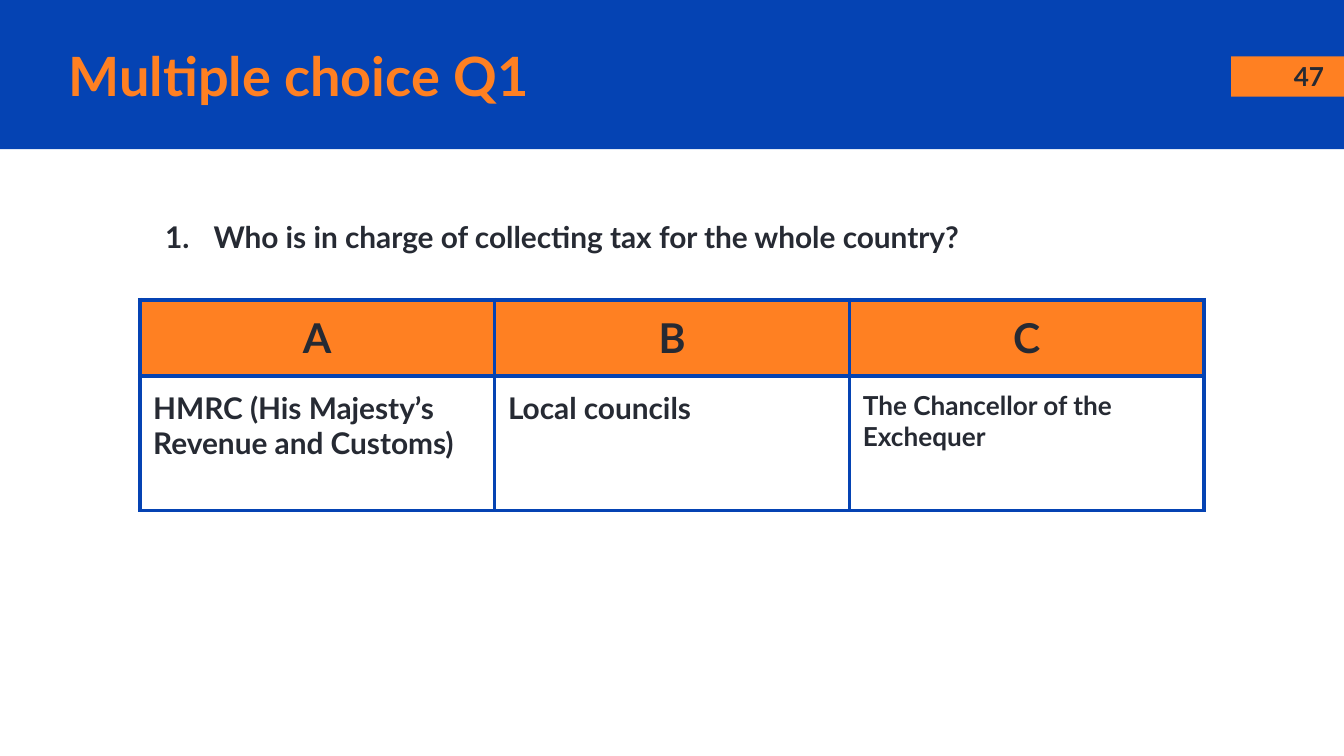
from lxml import etree
from pptx import Presentation
from pptx import util as u
from pptx.dml import color
from pptx.enum import shapes, text
from pptx.oxml import ns

WIDTH = 10
HEIGHT = WIDTH * 9 / 16
BLUE, ORANGE, INK = "0543B3", "FF8022", "262A33"
MARGINS = ("margin_left", "margin_right", "margin_top", "margin_bottom")


def rgb(value):
    """Turn a hex string into a colour."""
    return color.RGBColor.from_string(value)


def inches(box):
    """Turn a box of numbers into lengths."""
    return [u.Inches(length) for length in box]


def add_element(parent, tag, **attributes):
    """Append a drawing element with its attributes."""
    return etree.SubElement(parent, ns.qn(tag), attributes)


def write(frame, words, size, ink=INK, align=text.PP_ALIGN.LEFT):
    """Put one bold paragraph in a text frame."""
    para = frame.paragraphs[0]
    para.alignment = align
    span = para.add_run()
    span.text = words
    style = {"name": "Lato", "size": u.Pt(size), "bold": True}
    for name, value in style.items():
        setattr(span.font, name, value)
    span.font.color.rgb = rgb(ink)
    return para


def format_frame(frame, **changes):
    """Give a text frame its margins, wrapping and anchor."""
    style = dict.fromkeys(MARGINS, u.Inches(0.1))
    style.update(word_wrap=True, auto_size=text.MSO_AUTO_SIZE.NONE,
                 vertical_anchor=text.MSO_ANCHOR.MIDDLE)
    style.update(changes)
    for name, value in style.items():
        setattr(frame, name, value)


def add_block(page, box, fill):
    """Draw a plain filled rectangle."""
    block = page.shapes.add_shape(shapes.MSO_SHAPE.RECTANGLE, *inches(box))
    block.shadow.inherit = False
    block.fill.solid()
    block.fill.fore_color.rgb = rgb(fill)
    block.line.fill.background()


def add_header(page, box, heading, number):
    """Draw the band with the title and the page number tab."""
    left, top, width, height = box
    add_block(page, box, BLUE)
    tab = 0.084 * width
    add_block(page, (left + width - tab, top + 0.42, tab, 0.3), ORANGE)
    title = page.shapes.title
    title.element.getparent().append(title.element)
    place = inches((left + 0.41, top + height / 4, width - 1.26, height / 2))
    for name, value in zip(("left", "top", "width", "height"), place):
        setattr(title, name, value)
    format_frame(title.text_frame)
    write(title.text_frame, heading, 29, ORANGE)
    label = page.shapes.add_textbox(*inches((left + width - 0.52, top + 0.44, 0.52, 0.25)))
    format_frame(label.text_frame)
    write(label.text_frame, number, 14, align=text.PP_ALIGN.CENTER)


def add_question(page, box, words):
    """Write the numbered question."""
    frame = page.shapes.add_textbox(*inches(box)).text_frame
    format_frame(frame, vertical_anchor=text.MSO_ANCHOR.TOP)
    properties = write(frame, words, 16)._p.get_or_add_pPr()
    properties.set("marL", str(u.Inches(0.5)))
    properties.set("indent", str(u.Inches(-0.36)))
    add_element(add_element(properties, "a:buClr"), "a:srgbClr", val=INK)
    add_element(properties, "a:buFont", typeface="Lato")
    add_element(properties, "a:buAutoNum", type="arabicPeriod")


def add_borders(cell):
    """Outline all four sides of a table cell."""
    properties = cell._tc.get_or_add_tcPr()
    for side in "LRTB":
        line = add_element(properties, f"a:ln{side}", w=str(u.Pt(2.25)))
        add_element(add_element(line, "a:solidFill"), "a:srgbClr", val=BLUE)


def add_answers(page, box, answers):
    """Draw one lettered column for each answer."""
    table = page.shapes.add_table(2, len(answers), *inches(box)).table
    header = 0.57
    for row, height in zip(table.rows, (header, box[3] - header)):
        row.height = u.Inches(height)
    for index, (letter, words, size) in enumerate(answers):
        top, bottom = table.cell(0, index), table.cell(1, index)
        for cell in (top, bottom):
            for name in MARGINS:
                setattr(cell, name, u.Inches(0.1))
            add_borders(cell)
        top.fill.solid()
        top.fill.fore_color.rgb = rgb(ORANGE)
        bottom.fill.background()
        write(top.text_frame, letter, 22, align=text.PP_ALIGN.CENTER)
        write(bottom.text_frame, words, size)


def main():
    """Build the quiz slide."""
    deck = Presentation()
    deck.slide_width, deck.slide_height = inches((WIDTH, HEIGHT))
    page = deck.slides.add_slide(deck.slide_layouts[5])
    add_header(page, (0, 0, WIDTH, 1.11), "Multiple choice Q1", "47")
    add_question(page, (0.99, 1.53, 8.38, 0.84),
                 "Who is in charge of collecting tax for the whole country?")
    add_answers(page, (1.04, 2.23, 7.92, 1.57), [
        ("A", "HMRC (His Majesty’s Revenue and Customs)", 16),
        ("B", "Local councils", 16),
        ("C", "The Chancellor of the Exchequer", 14),
    ])
    deck.save("out.pptx")


if __name__ == "__main__":
    main()
